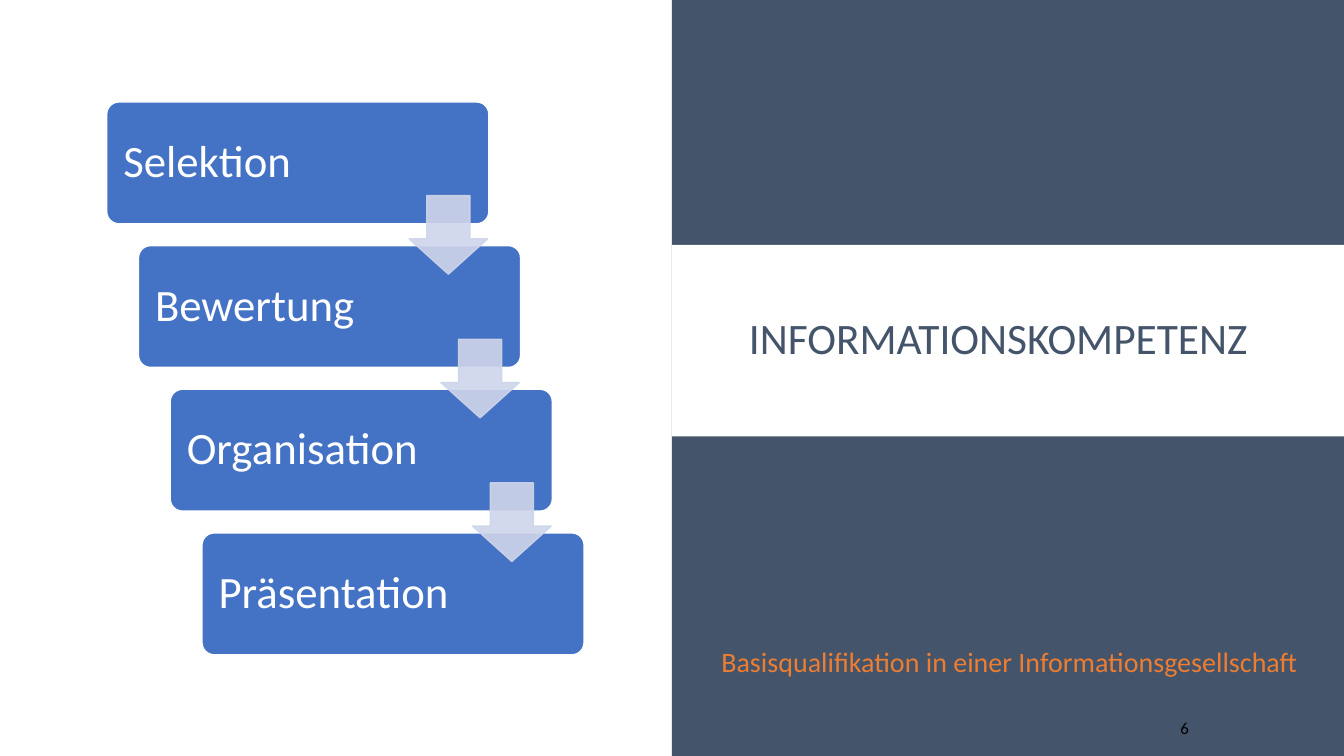
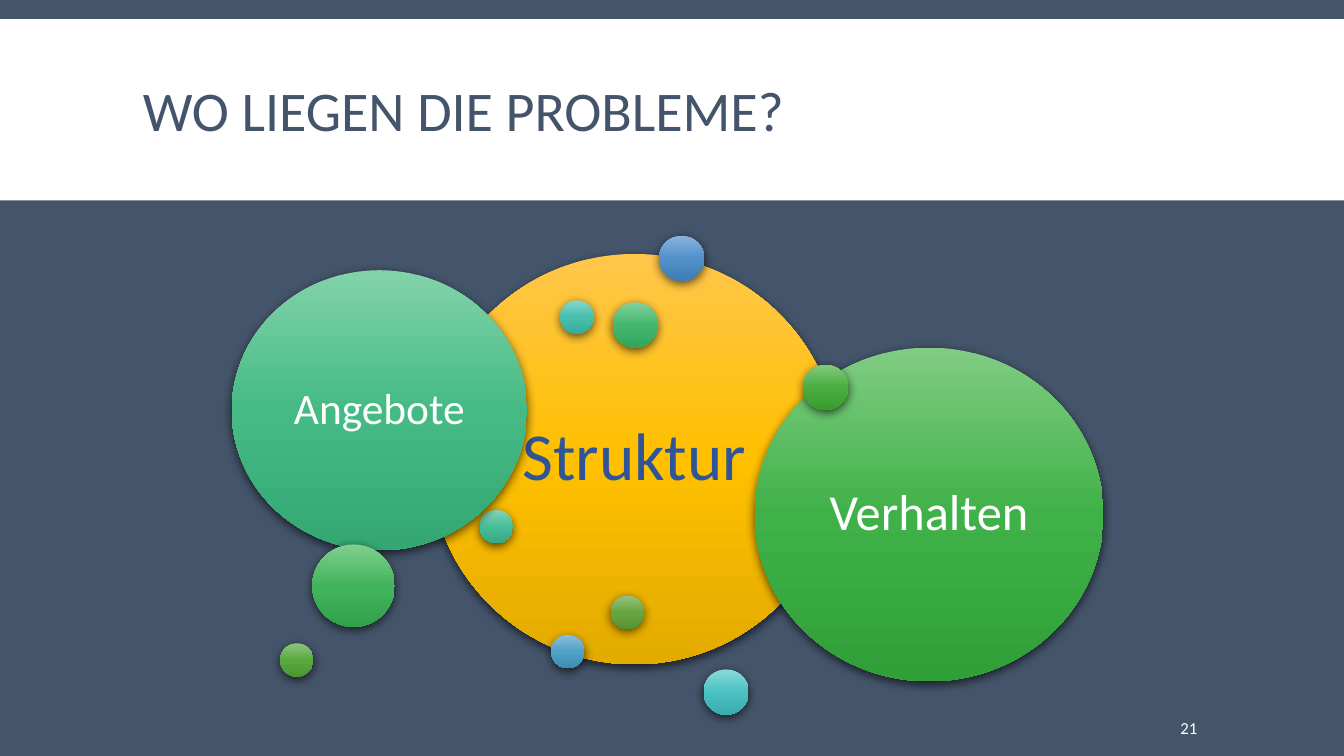
from copy import deepcopy

from lxml import etree
from pptx import Presentation
from pptx.dml.color import RGBColor
from pptx.enum.shapes import MSO_SHAPE
from pptx.enum.text import MSO_ANCHOR, MSO_AUTO_SIZE, PP_ALIGN
from pptx.oxml.ns import qn
from pptx.util import Cm, Pt

RECTANGLE, ROUNDED = MSO_SHAPE.RECTANGLE, MSO_SHAPE.ROUNDED_RECTANGLE
ELLIPSE, DOWN_ARROW = MSO_SHAPE.OVAL, MSO_SHAPE.DOWN_ARROW
LEFT, CENTER = PP_ALIGN.LEFT, PP_ALIGN.CENTER
TOP, MIDDLE = MSO_ANCHOR.TOP, MSO_ANCHOR.MIDDLE
NO_AUTOFIT = MSO_AUTO_SIZE.NONE

FONT = "Calibri"
SLATE, WHITE, BLACK = "44546A", "FFFFFF", "000000"
BLUE, DARK_BLUE, PALE_BLUE, ORANGE = "4472C4", "2F5597", "CFD5EA", "ED7D31"
WIDTH, HEIGHT = 33.87, 19.05
TITLE_ONLY = 5
DEFAULT_INSETS = (0.25, 0.13, 0.25, 0.13)
STEP_INSETS = BUBBLE_INSETS = (0.33,) * 4
NUMBER_INSETS = (0.13, 0.13, 0.25, 0.13)

STEPS = ["Selektion", "Bewertung", "Organisation", "Präsentation"]

SMALL, MEDIUM = (0.84, 0.84), (1.14, 1.14)
# left, top, (width, height), gradient from top to bottom, (text, size, colour)
BUBBLES = [
    (10.82, 6.4, (10.34, 10.34), ("FFC64B", "FFC000", "E3AB00"), ("Struktur", 48, DARK_BLUE)),
    (16.61, 5.94, MEDIUM, ("89B3E0", "5291C9", "3F7DB4"), None),
    (13.89, 16, SMALL, ("88BFDE", "50A1C7", "3D8DB2"), None),
    (17.73, 16.87, MEDIUM, ("86DADA", "4BC1C2", "39ADAE"), None),
    (14.12, 7.57, SMALL, ("84D8C9", "49BFAE", "38AC9A"), None),
    (12.09, 12.85, SMALL, ("83D6B8", "47BD99", "36A986"), None),
    (5.84, 6.81, (7.44, 7.06), ("82D3A9", "45BA84", "34A772"), ("Angebote", 31, WHITE)),
    (15.44, 7.62, MEDIUM, ("81D19A", "43B76F", "33A55E"), None),
    (7.87, 13.72, (2.08, 2.08), ("80CF8E", "42B45B", "31A24B"), None),
    (19.02, 8.76, (8.79, 8.41), ("80CC83", "40B148", "309F38"), ("Verhalten", 36, WHITE)),
    (20.24, 9.19, MEDIUM, ("84C97F", "49AE3F", "399C2F"), None),
    (7.06, 16.21, SMALL, ("8CC57F", "59A93F", "499730"), None),
    (15.39, 15.01, SMALL, ("95C17F", "68A440", "589331"), None),
]


def rgb(color):
    return RGBColor.from_string(color)


def set_values(target, values):
    for name, value in values.items():
        setattr(target, name, value)


class Deck:
    """Holds the presentation, its style and the current slide."""

    def __init__(self):
        self.presentation = Presentation()
        set_values(self.presentation, {"slide_width": Cm(WIDTH), "slide_height": Cm(HEIGHT)})
        self.slide = None

    def add_slide(self, background):
        layout = self.presentation.slide_layouts[TITLE_ONLY]
        self.slide = self.presentation.slides.add_slide(layout)
        fill = self.slide.background.fill
        fill.solid()
        fill.fore_color.rgb = rgb(background)

    def set_text(self, shape, text, size, color, align=LEFT, anchor=MIDDLE,
                 insets=DEFAULT_INSETS, spacing=0.9):
        frame = shape.text_frame
        left, top, right, bottom = (Cm(inset) for inset in insets)
        set_values(frame, {
            "text": text, "word_wrap": True, "auto_size": NO_AUTOFIT, "vertical_anchor": anchor,
            "margin_left": left, "margin_top": top, "margin_right": right, "margin_bottom": bottom,
        })
        paragraph = frame.paragraphs[0]
        set_values(paragraph, {"alignment": align, "line_spacing": spacing})
        font = paragraph.runs[0].font
        set_values(font, {"name": FONT, "size": Pt(size)})
        font.color.rgb = rgb(color)

    def title(self, text, left, top, width, size, align=LEFT):
        """Fill the title placeholder and lift it above the bands drawn so far."""
        title = self.slide.shapes.title
        set_values(title, {"left": Cm(left), "top": Cm(top), "width": Cm(width), "height": Cm(4.19)})
        self.set_text(title, text, size, SLATE, align, spacing=0.85)
        self.slide.shapes._spTree.append(title._element)

    def text(self, text, left, top, width, height, size, color, **options):
        box = self.slide.shapes.add_textbox(Cm(left), Cm(top), Cm(width), Cm(height))
        self.set_text(box, text, size, color, spacing=1.0, **options)

    def page_number(self, number, color):
        self.text(number, 29.62, 17.83, 2.62, 1.02, 12, color, insets=NUMBER_INSETS)

    def shape(self, kind, left, top, width, height, fill=None, line=None, adjustments=()):
        shape = self.slide.shapes.add_shape(kind, Cm(left), Cm(top), Cm(width), Cm(height))
        shape.shadow.inherit = False
        for index, value in enumerate(adjustments):
            shape.adjustments[index] = value
        if fill:
            shape.fill.solid()
            shape.fill.fore_color.rgb = rgb(fill)
        if line:
            shape.line.color.rgb = rgb(line)
            shape.line.width = Pt(1)
        else:
            shape.line.fill.background()
        return shape

    def band(self, left, top, width, height, color):
        self.shape(RECTANGLE, left, top, width, height, color)

    def step(self, text, left, top):
        box = self.shape(ROUNDED, left, top, 9.63, 3.07, BLUE, WHITE, [0.1])
        self.set_text(box, text, 32, WHITE, insets=STEP_INSETS)

    def step_arrow(self, left, top):
        arrow = self.shape(DOWN_ARROW, left, top, 1.98, 1.98, PALE_BLUE, PALE_BLUE, [0.55, 0.45])
        for color in arrow._element.spPr.iter(qn("a:srgbClr")):
            etree.SubElement(color, qn("a:alpha"), val="90000")

    def bubble(self, left, top, size, colors, label):
        bubble = self.shape(ELLIPSE, left, top, *size)
        self.gradient(bubble, colors)
        self.drop_shadow(bubble)
        if label:
            self.set_text(bubble, *label, align=CENTER, insets=BUBBLE_INSETS)

    def gradient(self, shape, colors):
        """Give a vertical gradient of three evenly spaced colours."""
        shape.fill.gradient()
        shape.fill.gradient_angle = 270
        first_stop = shape._element.spPr.find(".//" + qn("a:gs"))
        first_stop.addnext(deepcopy(first_stop))
        for index, (stop, color) in enumerate(zip(shape.fill.gradient_stops, colors)):
            stop.color.rgb = rgb(color)
            stop.position = index / 2

    def drop_shadow(self, shape):
        effects = shape._element.spPr.find(qn("a:effectLst"))
        shadow = etree.SubElement(effects, qn("a:outerShdw"), blurRad=str(Pt(7)),
                                  dist=str(Pt(2.2)), dir="5400000", rotWithShape="0")
        color = etree.SubElement(shadow, qn("a:srgbClr"), val=BLACK)
        etree.SubElement(color, qn("a:alpha"), val="63000")


def add_competence_slide(deck):
    half = WIDTH / 2
    deck.add_slide(WHITE)
    deck.band(half, 0, half, HEIGHT, SLATE)
    deck.band(half, 6.17, half, 4.83, WHITE)
    deck.title("INFORMATIONSKOMPETENZ", 17.8, 6.5, 14.71, 31, CENTER)
    corners = [(2.69 + 0.8 * index, 2.57 + 3.62 * index) for index in range(len(STEPS))]
    for text, (left, top) in zip(STEPS, corners):
        deck.step(text, left, top)
    for left, top in corners[:-1]:
        deck.step_arrow(left + 7.62, top + 2.36)
    deck.text("Basisqualifikation in einer Informationsgesellschaft",
              17.93, 16.1, 15.39, 1.12, 20, ORANGE, anchor=TOP)
    deck.page_number("6", BLACK)


def add_problems_slide(deck):
    deck.add_slide(SLATE)
    deck.band(0, 0.48, WIDTH, 4.57, WHITE)
    deck.title("WO LIEGEN DIE PROBLEME?", 3.35, 0.79, 27.18, 40)
    for bubble in BUBBLES:
        deck.bubble(*bubble)
    deck.page_number("21", WHITE)


def main():
    deck = Deck()
    add_competence_slide(deck)
    add_problems_slide(deck)
    deck.presentation.save("out.pptx")


if __name__ == "__main__":
    main()
